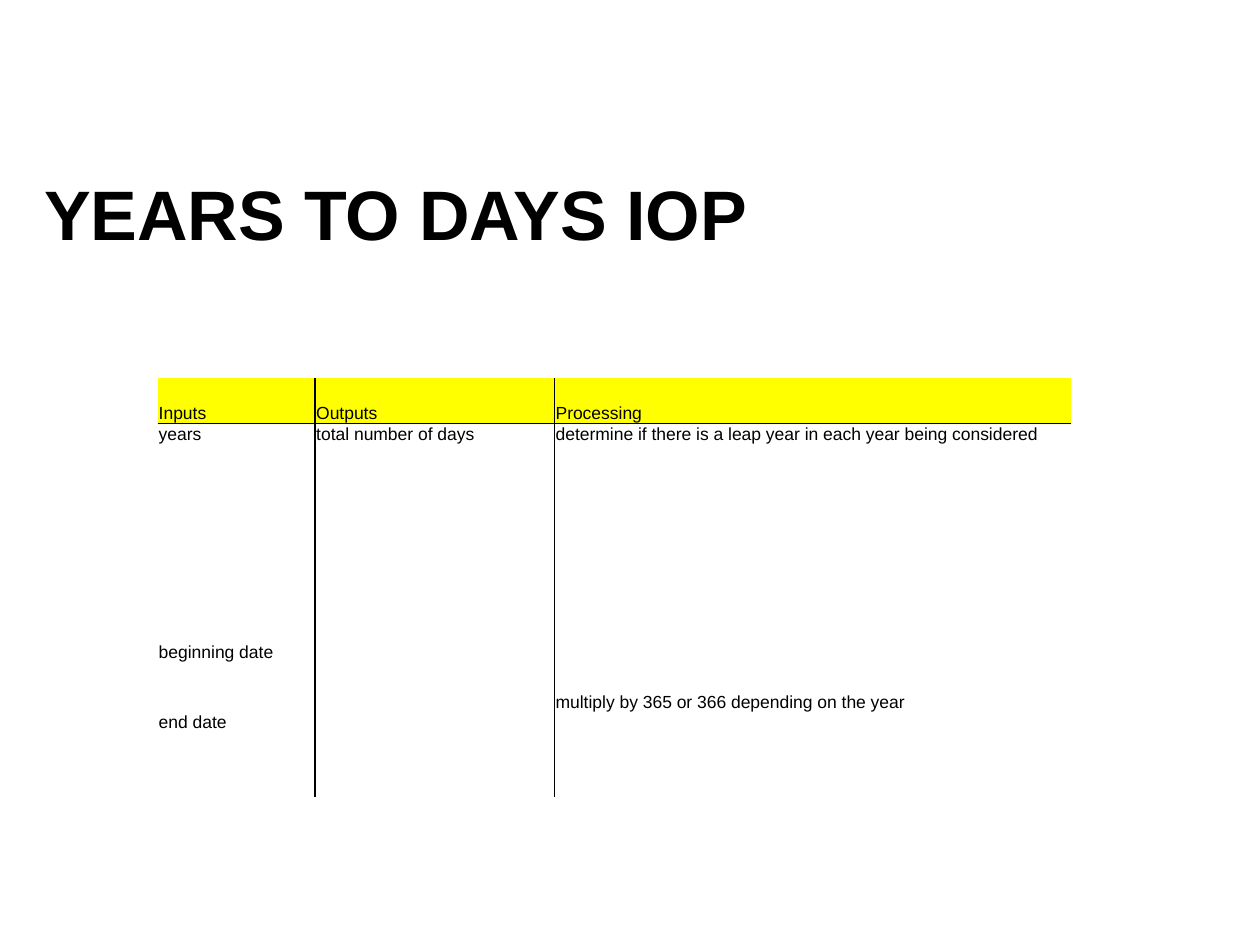
from lxml.etree import SubElement
from pptx import Presentation
from pptx.dml.color import RGBColor
from pptx.enum.text import MSO_ANCHOR as Anchor, PP_ALIGN as Align
from pptx.oxml.ns import qn
from pptx.util import Inches, Pt

FONT, INK, HEADER_FILL = "Arial", "000000", "FFFF00"
COLUMN_WIDTHS = [1.25, 1.9, 4.1]
ROW_HEIGHTS = [0.36, 1.73, 0.56, 0.34, 0.34]
IOP_ROWS = [
    ["Inputs", "Outputs", "Processing"],
    ["years", "total number of days",
     "determine if there is a leap year in each year being considered"],
    ["beginning date", "", "multiply by 365 or 366 depending on the year"],
    ["end date", "", ""],
    ["", "", ""],
]
BOTTOM_ANCHORED = {(0, 0), (0, 1), (0, 2), (2, 2)}


def color(hex_value):
    return RGBColor.from_string(hex_value)


def style_font(font, size, bold=False):
    font.name, font.size, font.bold = FONT, Pt(size), bold
    font.color.rgb = color(INK)


def set_borders(cell, ruled_sides):
    """Rule the given sides (letters from LRTB) and clear the others."""
    properties = cell._tc.get_or_add_tcPr()
    for position, side in enumerate("LRTB"):
        line = properties.makeelement(qn(f"a:ln{side}"), {"w": str(Pt(1))})
        properties.insert(position, line)
        if side in ruled_sides:
            solid = SubElement(line, qn("a:solidFill"))
            SubElement(solid, qn("a:srgbClr"), val=INK)
        else:
            SubElement(line, qn("a:noFill"))


def add_heading(slide, left, top, width, height):
    heading = slide.shapes.title
    heading.left, heading.top = Inches(left), Inches(top)
    heading.width, heading.height = Inches(width), Inches(height)
    frame = heading.text_frame
    frame.word_wrap = True
    frame.vertical_anchor = Anchor.TOP
    frame.margin_top = Inches(0.1)
    paragraph = frame.paragraphs[0]
    paragraph.alignment = Align.LEFT
    run = paragraph.add_run()
    run.text = "YEARS TO DAYS IOP"
    style_font(run.font, 40, bold=True)


def fill_cell(cell, text, row, column):
    is_header = row == 0
    cell.margin_left = cell.margin_right = cell.margin_top = Inches(0.01)
    cell.margin_bottom = 0
    bottom = (row, column) in BOTTOM_ANCHORED
    cell.vertical_anchor = Anchor.BOTTOM if bottom else Anchor.TOP
    if is_header:
        cell.fill.solid()
        cell.fill.fore_color.rgb = color(HEADER_FILL)
    else:
        cell.fill.background()

    paragraph = cell.text_frame.paragraphs[0]
    if text:
        run = paragraph.add_run()
        run.text = text
        style_font(run.font, 10)
    else:
        paragraph.font.size = Pt(10)

    sides = "L" if column > 0 else ""
    sides += "R" if column < len(COLUMN_WIDTHS) - 1 else ""
    sides += {0: "B", 1: "T"}.get(row, "")
    set_borders(cell, sides)


def add_iop_table(slide, left, top):
    table = slide.shapes.add_table(
        len(ROW_HEIGHTS), len(COLUMN_WIDTHS), Inches(left), Inches(top),
        Inches(sum(COLUMN_WIDTHS)), Inches(sum(ROW_HEIGHTS))).table
    table.first_row = table.horz_banding = False
    for column, width in zip(table.columns, COLUMN_WIDTHS):
        column.width = Inches(width)
    for row, height in zip(table.rows, ROW_HEIGHTS):
        row.height = Inches(height)
    for r, texts in enumerate(IOP_ROWS):
        for c, text in enumerate(texts):
            fill_cell(table.cell(r, c), text, r, c)


def main():
    deck = Presentation()
    deck.slide_width, deck.slide_height = Inches(10), Inches(7.5)
    title_only = deck.slide_layouts[5]
    slide = deck.slides.add_slide(title_only)
    add_heading(slide, 0.25, 1.25, 9.42, 1.08)
    add_iop_table(slide, 1.25, 3)
    deck.save("out.pptx")


if __name__ == "__main__":
    main()
